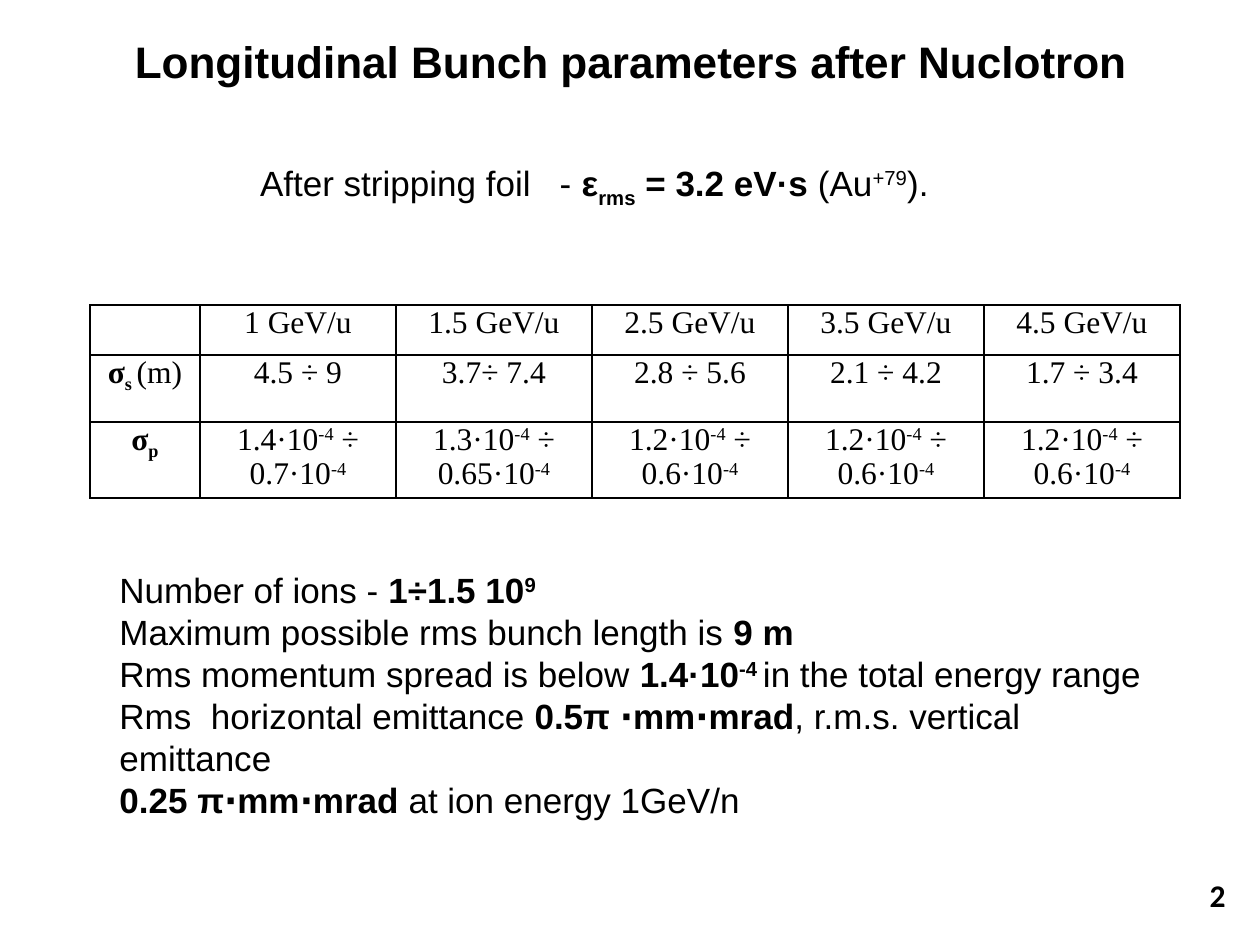
from lxml import etree
from pptx import Presentation
from pptx import util as u
from pptx.dml.color import RGBColor
from pptx.enum import text
from pptx.oxml import ns

PX = 914400 // 126
COLORS = {"ink": "000000", "paper": "FFFFFF"}
SUP, SUB = 30, -25
LEFT, CENTER, RIGHT = text.PP_ALIGN.LEFT, text.PP_ALIGN.CENTER, text.PP_ALIGN.RIGHT
TOP, MIDDLE = text.MSO_ANCHOR.TOP, text.MSO_ANCHOR.MIDDLE


def px(n):
    return u.Emu(n * PX)


def color(name):
    return RGBColor.from_string(COLORS[name])


class Deck:
    """Holds the style and the current slide. A run is (text, bold, baseline)."""

    def __init__(self, width, height):
        self.prs = Presentation()
        self.prs.slide_width, self.prs.slide_height = px(width), px(height)
        self.s = self.prs.slides.add_slide(self.prs.slide_layouts[6])
        self.s.background.fill.solid()
        self.s.background.fill.fore_color.rgb = color("paper")

    def add_text(self, tf, paragraphs, font, size, align):
        for i, runs in enumerate(paragraphs):
            p = tf.paragraphs[0] if i == 0 else tf.add_paragraph()
            p.alignment = align
            p.font.size = u.Pt(size)
            for content, bold, base in runs:
                r = p.add_run()
                r.text = content
                r.font.name, r.font.size, r.font.bold = font, u.Pt(size), bold
                r.font.color.rgb = color("ink")
                if base:
                    r._r.get_or_add_rPr().set("baseline", str(base * 1000))

    def text_box(self, box, paragraphs, size, font="Arial", align=LEFT, anchor=TOP, wrap=True):
        tf = self.s.shapes.add_textbox(*map(px, box)).text_frame
        tf.word_wrap = wrap
        tf.vertical_anchor = anchor
        self.add_text(tf, paragraphs, font, size, align)

    def border(self, cell):
        tc_pr = cell._tc.get_or_add_tcPr()
        for i, side in enumerate(("lnL", "lnR", "lnT", "lnB")):
            ln = etree.Element(ns.qn(f"a:{side}"), w=str(u.Pt(1)))
            fill = etree.SubElement(ln, ns.qn("a:solidFill"))
            etree.SubElement(fill, ns.qn("a:srgbClr"), val=COLORS["ink"])
            tc_pr.insert(i, ln)

    def table(self, left, top, widths, heights, rows, font, size):
        frame = self.s.shapes.add_table(len(heights), len(widths), px(left), px(top),
                                        px(sum(widths)), px(sum(heights)))
        table = frame.table
        table.first_row = table.horz_banding = False
        for column, width in zip(table.columns, widths):
            column.width = px(width)
        for row, height, contents in zip(table.rows, heights, rows):
            row.height = px(height)
            for cell, runs in zip(row.cells, contents):
                cell.margin_left = cell.margin_right = px(9)
                cell.margin_top = cell.margin_bottom = 0
                cell.fill.background()
                self.border(cell)
                self.add_text(cell.text_frame, [runs], font, size, CENTER)


def plain(content):
    return (content, False, 0)


def bold(content, base=0):
    return (content, True, base)


def spread(first, last):
    """Runs of a momentum spread range in units of 10^-4."""
    power = ("-4", False, SUP)
    return [plain(f"{first}·10"), power, plain(f" ÷ {last}·10"), power]


def main():
    deck = Deck(1260, 945)

    # Title
    deck.text_box((64, 27, 1134, 68), [[bold("Longitudinal Bunch parameters after Nuclotron")]],
                  25.2, align=CENTER, anchor=MIDDLE)

    # Emittance after the foil
    deck.text_box((233, 155, 708, 55), [[
        plain("After stripping foil   - "), bold("ε"), bold("rms", SUB), bold(" = 3.2 eV·s"),
        plain(" (Au"), ("+79", False, SUP), plain(")."),
    ]], 20, align=RIGHT, wrap=False)

    # Bunch length and momentum spread by energy
    energies = ["1", "1.5", "2.5", "3.5", "4.5"]
    lengths = ["4.5 ÷ 9", "3.7÷ 7.4", "2.8 ÷ 5.6", "2.1 ÷ 4.2", "1.7 ÷ 3.4"]
    spreads = [("1.4", "0.7"), ("1.3", "0.65")] + [("1.2", "0.6")] * 3
    rows = [
        [[]] + [[plain(f"{e} GeV/u")] for e in energies],
        [[bold("σ"), bold("s ", SUB), plain("(m)")]] + [[plain(v)] for v in lengths],
        [[bold("σ"), bold("p", SUB)]] + [spread(*pair) for pair in spreads],
    ]
    deck.table(90, 305, [110] + [196] * len(energies), [50, 67, 76], rows,
               "Times New Roman", 18)

    # Beam summary
    deck.text_box((107, 562, 1070, 224), [
        [plain("Number of ions - "), bold("1÷1.5 10"), bold("9", SUP)],
        [plain("Maximum possible rms bunch length is "), bold("9 m")],
        [plain("Rms momentum spread is below "), bold("1.4·10"), bold("-4 ", SUP),
         plain("in the total energy range")],
        [plain("Rms  horizontal emittance "), bold("0.5π ⋅mm⋅mrad"),
         plain(", r.m.s. vertical emittance")],
        [bold("0.25 π⋅mm⋅mrad"), plain(" at ion energy 1GeV/n")],
    ], 20)

    # Page number
    deck.text_box((944, 870, 294, 50), [[bold("2")]], 18, "Calibri", RIGHT, MIDDLE)

    deck.prs.save("out.pptx")


if __name__ == "__main__":
    main()
